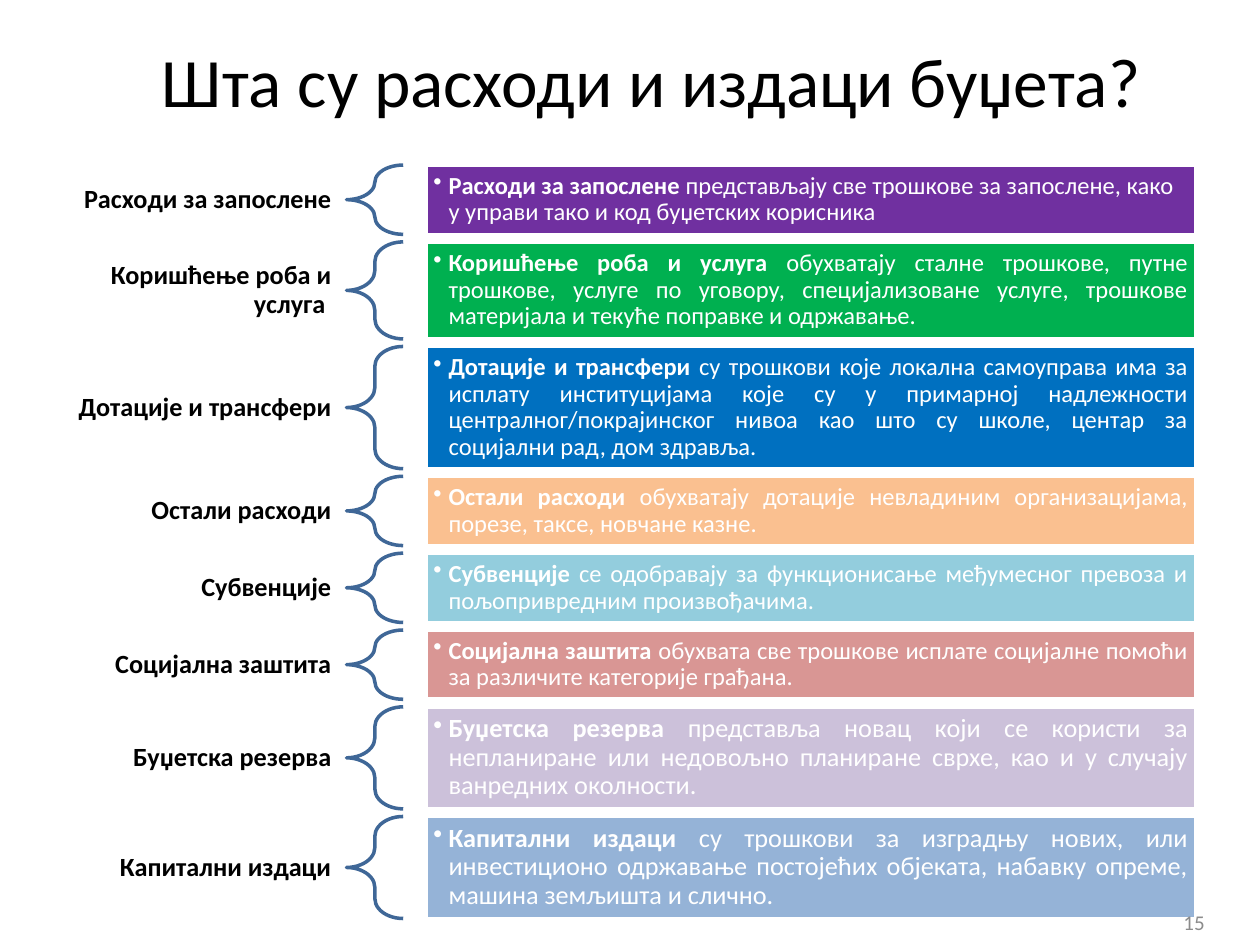
from dataclasses import dataclass
from typing import NamedTuple

from lxml.etree import SubElement
from pptx import Presentation
from pptx.dml.color import RGBColor
from pptx.enum.shapes import MSO_SHAPE as Preset
from pptx.enum.text import MSO_ANCHOR as Anchor, PP_ALIGN as Align
from pptx.oxml.ns import qn
from pptx.util import Inches, Pt


@dataclass(frozen=True)
class Theme:
    font: str = "Calibri"
    ink: str = "000000"
    paper: str = "FFFFFF"
    brace: str = "3F6797"
    muted: str = "8C8C8C"
    title_size: float = 39.6
    label_size: float = 15
    number_size: float = 12
    line_width: float = 2
    line_spacing: float = 0.9


class Box(NamedTuple):
    left: float
    top: float
    width: float
    height: float

    def emu(self):
        return [Inches(side) for side in self]


class Expense(NamedTuple):
    name: str
    meaning: str
    fill: str
    height: float
    size: float = 14
    align: Align = Align.JUSTIFY
    label_height: float = 0.32


THEME = Theme()
ROWS_TOP, ROW_GAP = 1.31, 0.06
LABEL_LEFT, LABEL_WIDTH = 0.5, 2.25
BRACE_LEFT, BRACE_WIDTH = 2.75, 0.45
CARD_LEFT, CARD_WIDTH = 3.38, 6.11

EXPENSES = [
    Expense("Расходи за запослене ",
            "представљају све трошкове за запослене, како у управи тако и код "
            "буџетских корисника", "7030A0", 0.55, align=Align.LEFT),
    Expense("Коришћење роба и услуга ",
            "обухватају сталне трошкове, путне трошкове, услуге по уговору, "
            "специјализоване услуге, трошкове материјала и текуће поправке и "
            "одржавање.", "00B050", 0.77, label_height=0.55),
    Expense("Дотације и трансфери ",
            "су трошкови које локална самоуправа има за исплату институцијама "
            "које су у примарној надлежности централног/покрајинског нивоа као "
            "што су школе, центар за социјални рад, дом здравља.", "0070C0", 0.97),
    Expense("Остали расходи ",
            "обухватају дотације невладиним организацијама, порезе, таксе, "
            "новчане казне.", "FAC090", 0.55),
    Expense("Субвенције ",
            "сe одобравају за функционисање међумесног превоза и "
            "пољопривредним произвођачима.", "93CDDD", 0.55),
    Expense("Социјална заштита ",
            "обухвата све трошкове исплате социјалне помоћи за различите "
            "категорије грађана.", "D99694", 0.55),
    Expense("Буџетска резерва ",
            "представља новац који се користи за непланиране или недовољно "
            "планиране сврхе, као и у случају ванредних околности.",
            "CCC1DA", 0.81, 15),
    Expense("Капитални издаци ",
            "су трошкови за изградњу нових, или инвестиционо одржавање "
            "постојећих објеката, набавку опреме, машина земљишта и слично.",
            "95B3D7", 0.81, 15),
]


def style(paragraph, size, color, align, bold=None):
    paragraph.alignment = align
    font = paragraph.font
    font.name, font.size, font.bold = THEME.font, Pt(size), bold
    font.color.rgb = RGBColor.from_string(color)


def set_frame(frame, inset_x, inset_y):
    frame.word_wrap = True
    frame.vertical_anchor = Anchor.MIDDLE
    frame.margin_left = frame.margin_right = Inches(inset_x)
    frame.margin_top = frame.margin_bottom = Inches(inset_y)


def add_text(slide, box, text, size, color, align, bold=None, insets=(0.1, 0.05)):
    frame = slide.shapes.add_textbox(*box.emu()).text_frame
    set_frame(frame, *insets)
    paragraph = frame.paragraphs[0]
    paragraph.text = text
    style(paragraph, size, color, align, bold)
    return paragraph


def add_outlined(slide, preset, box, line_color):
    shape = slide.shapes.add_shape(preset, *box.emu())
    shape.shadow.inherit = False
    shape.line.color.rgb = RGBColor.from_string(line_color)
    shape.line.width = Pt(THEME.line_width)
    return shape


def add_bullet(paragraph, indent):
    properties = paragraph._p.get_or_add_pPr()
    properties.set("marL", str(Inches(indent)))
    properties.set("indent", str(-Inches(indent)))
    SubElement(properties, qn("a:buChar")).set("char", "•")


def add_label(slide, box, expense):
    # A two-line label keeps its closing space, which shifts its last line.
    wraps = expense.label_height > Expense._field_defaults["label_height"]
    name = expense.name if wraps else expense.name.strip()
    top = box.top + (box.height - expense.label_height) / 2
    paragraph = add_text(slide, box._replace(top=top, height=expense.label_height),
                         name, THEME.label_size, THEME.ink, Align.RIGHT, True,
                         (0.12, 0.04))
    paragraph.line_spacing = THEME.line_spacing


def add_brace(slide, box):
    brace = add_outlined(slide, Preset.LEFT_BRACE, box, THEME.brace)
    brace.adjustments[0], brace.adjustments[1] = 0.35, 0.5
    brace.fill.background()


def add_card(slide, box, expense):
    card = add_outlined(slide, Preset.RECTANGLE, box, THEME.paper)
    card.fill.solid()
    card.fill.fore_color.rgb = RGBColor.from_string(expense.fill)
    set_frame(card.text_frame, 0.06, 0.06)
    paragraph = card.text_frame.paragraphs[0]
    style(paragraph, expense.size, THEME.paper, expense.align)
    paragraph.line_spacing = THEME.line_spacing
    add_bullet(paragraph, 0.12)
    for text, bold in ((expense.name, True), (expense.meaning, False)):
        run = paragraph.add_run()
        run.text, run.font.bold = text, bold


def add_expenses(slide, top):
    """Stack one label, brace and card per expense, downwards from top."""
    for expense in EXPENSES:
        height = expense.height
        add_label(slide, Box(LABEL_LEFT, top, LABEL_WIDTH, height), expense)
        add_brace(slide, Box(BRACE_LEFT, top, BRACE_WIDTH, height))
        add_card(slide, Box(CARD_LEFT, top, CARD_WIDTH, height), expense)
        top += height + ROW_GAP


def main():
    deck = Presentation()
    deck.slide_width, deck.slide_height = Inches(10), Inches(7.5)
    slide = deck.slides.add_slide(deck.slide_layouts[6])
    add_text(slide, Box(0.67, 0.29, 9, 0.68), "Шта су расходи и издаци буџета?",
             THEME.title_size, THEME.ink, Align.CENTER)
    add_expenses(slide, ROWS_TOP)
    add_text(slide, Box(7.33, 7.12, 2.33, 0.4), "15",
             THEME.number_size, THEME.muted, Align.RIGHT)
    deck.save("out.pptx")


if __name__ == "__main__":
    main()
